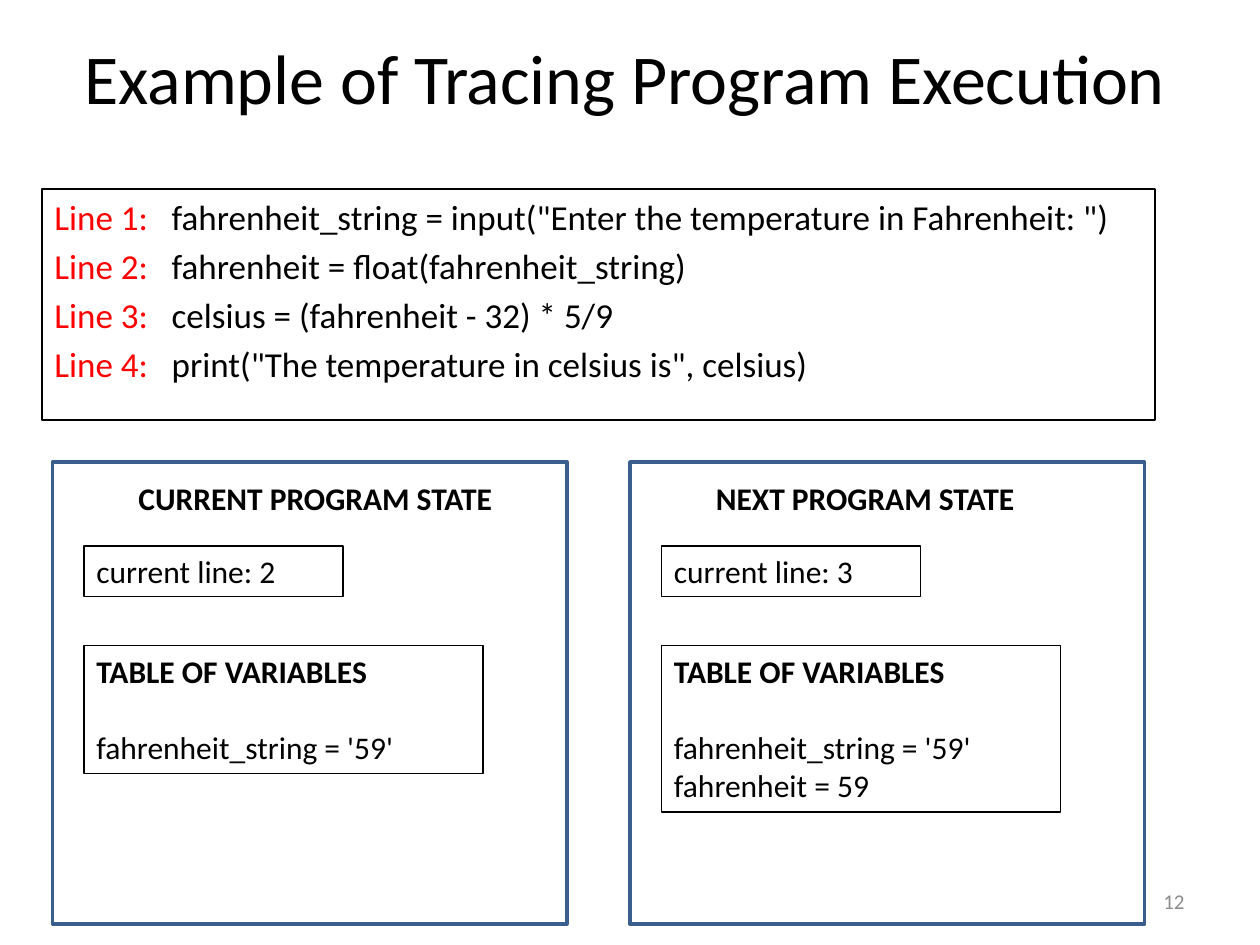
from pptx import Presentation
from pptx.dml.color import RGBColor
from pptx.enum import shapes, text
from pptx.util import Pt

BLACK = RGBColor(0x00, 0x00, 0x00)
RED = RGBColor(0xFF, 0x00, 0x00)
GREY = RGBColor(0x8C, 0x8C, 0x8C)
BLUE = RGBColor(0x3A, 0x5F, 0x8C)

FONT = "Calibri"
LABEL_WIDTH = 67
BODY_LINE = 22  # height of one 18-point line

CODE = [
    'fahrenheit_string = input("Enter the temperature in Fahrenheit: ")',
    "fahrenheit = float(fahrenheit_string)",
    "celsius = (fahrenheit - 32) * 5/9",
    'print("The temperature in celsius is", celsius)',
]
STATES = [
    ("CURRENT PROGRAM STATE", 2, ["fahrenheit_string = '59'"]),
    ("NEXT PROGRAM STATE", 3, ["fahrenheit_string = '59'", "fahrenheit = 59"]),
]


def set_format(target, values):
    for name, value in values.items():
        setattr(target, name, value)


def add_run(paragraph, words, size=18, color=BLACK, bold=False):
    run = paragraph.add_run()
    run.text = words
    set_format(run.font, {"name": FONT, "size": Pt(size), "bold": bold})
    run.font.color.rgb = color


def add_box(parent, box, line_color=None, line_width=0.75,
            anchor=text.MSO_ANCHOR.TOP):
    """Add an outlined rectangle, or a plain text box without a line colour."""
    lengths = [Pt(value) for value in box]
    if line_color is None:
        shape = parent.add_textbox(*lengths)
    else:
        shape = parent.add_shape(shapes.MSO_SHAPE.RECTANGLE, *lengths)
        shape.shadow.inherit = False
        shape.fill.background()
        shape.line.color.rgb = line_color
        shape.line.width = Pt(line_width)
    set_format(shape.text_frame, {"word_wrap": True, "vertical_anchor": anchor})
    shape.text_frame.paragraphs[0].alignment = text.PP_ALIGN.LEFT
    return shape.text_frame


def add_label(parent, box, words, align=text.PP_ALIGN.LEFT, line_color=None,
              anchor=text.MSO_ANCHOR.TOP, **font):
    paragraph = add_box(parent, box, line_color, anchor=anchor).paragraphs[0]
    paragraph.alignment = align
    add_run(paragraph, words, **font)


def add_code(parent, box):
    frame = add_box(parent, box, BLACK)
    for number, code in enumerate(CODE, 1):
        paragraph = frame.paragraphs[0] if number == 1 else frame.add_paragraph()
        set_format(paragraph, {"alignment": text.PP_ALIGN.LEFT,
                               "space_before": Pt(4)})
        # The hanging indent lines the code up after its label
        properties = paragraph._p.get_or_add_pPr()
        properties.set("marL", str(Pt(LABEL_WIDTH)))
        properties.set("indent", str(-Pt(LABEL_WIDTH)))
        add_run(paragraph, f"Line {number}:\t", 20, RED)
        add_run(paragraph, code, 20)


def add_state(parent, box, heading, current_line, variables):
    left, top, width, height = box
    panel = parent.add_group_shape().shapes
    add_box(panel, box, BLUE, 2)

    # Heading and current line
    add_label(panel, (left + 42, top + 6, 228, 29), heading, bold=True)
    add_label(panel, (left + 18, top + 48, 148, 29),
              f"current line: {current_line}", line_color=BLACK)

    # Table of variables
    table_height = 7 + BODY_LINE * (2 + len(variables))
    frame = add_box(panel, (left + 18, top + 105, 228, table_height), BLACK)
    title = frame.paragraphs[0]
    title.space_after = Pt(BODY_LINE)
    add_run(title, "TABLE OF VARIABLES", bold=True)
    for variable in variables:
        paragraph = frame.add_paragraph()
        paragraph.alignment = text.PP_ALIGN.LEFT
        add_run(paragraph, variable)


def main():
    presentation = Presentation()
    set_format(presentation, {"slide_width": Pt(720), "slide_height": Pt(540)})
    slide = presentation.slides.add_slide(presentation.slide_layouts[6])
    parts = slide.shapes

    # Title and page number
    middle = text.MSO_ANCHOR.MIDDLE
    add_label(parts, (6, 12, 702, 63), "Example of Tracing Program Execution",
              text.PP_ALIGN.CENTER, anchor=middle, size=40)
    add_label(parts, (516, 500.5, 168, 28.75), "12",
              text.PP_ALIGN.RIGHT, anchor=middle, size=12, color=GREY)

    # Program, then its states side by side
    add_code(parts, (24, 108, 636, 132))
    for index, state in enumerate(STATES):
        add_state(parts, (30 + 330 * index, 264, 294, 264), *state)

    presentation.save("out.pptx")


if __name__ == "__main__":
    main()
